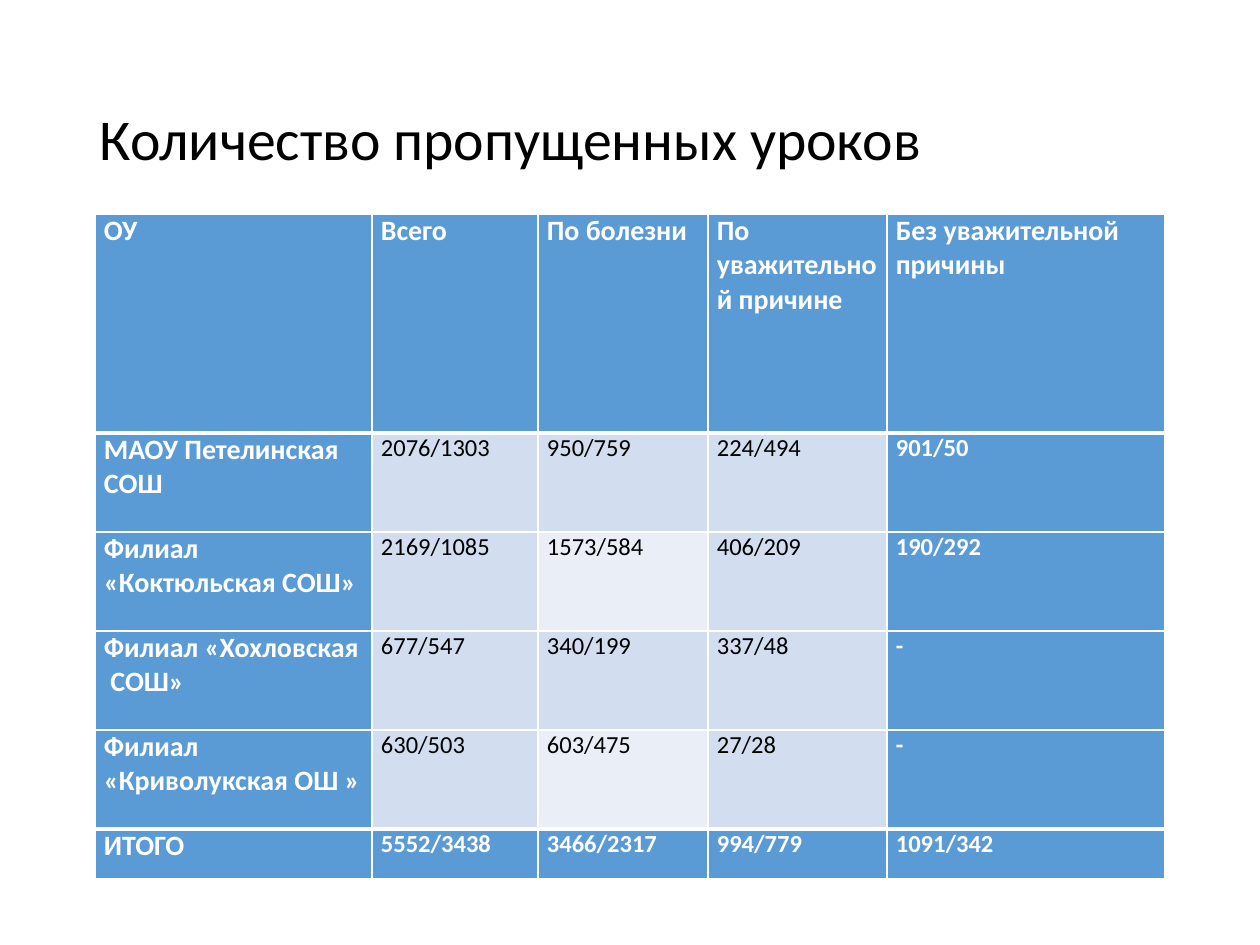
"""Builds a slide with a table of missed lessons by school."""
from dataclasses import dataclass

from lxml import etree
from pptx import Presentation
from pptx.dml.color import RGBColor
from pptx.enum import text
from pptx.oxml.ns import qn
from pptx.util import Emu, Pt

SCALE = 914400 / 126
FONT = "Calibri"
WHITE, BLACK = "FFFFFF", "000000"
BLUE, BAND, PALE = "5B9BD5", "D2DEEF", "EAEFF7"
COLS = [277, 166, 170, 179, 278]
HEIGHTS = [219, 99, 99, 99, 99, 50]


@dataclass
class Row:
    school: str
    values: list[str]


ROWS = [
    Row("ОУ", ["Всего", "По болезни", "По уважительной причине", "Без уважительной причины"]),
    Row("МАОУ Петелинская СОШ", ["2076/1303", "950/759", "224/494", "901/50"]),
    Row("Филиал «Коктюльская СОШ»", ["2169/1085", "1573/584", "406/209", "190/292"]),
    Row("Филиал «Хохловская  СОШ»", ["677/547", "340/199", "337/48", "-"]),
    Row("Филиал «Криволукская ОШ »", ["630/503", "603/475", "27/28", "-"]),
    Row("ИТОГО", ["5552/3438", "3466/2317", "994/779", "1091/342"]),
]


def px(n: int) -> Emu:
    return Emu(round(n * SCALE))


def rgb(value: str) -> RGBColor:
    return RGBColor.from_string(value)


def write(tf, words: str, *, size: int, color: str = BLACK, bold: bool = False,
          spacing: float = 1.0) -> None:
    p = tf.paragraphs[0]
    p.alignment = text.PP_ALIGN.LEFT
    p.line_spacing = spacing
    r = p.add_run()
    r.text = words
    r.font.name, r.font.size, r.font.bold = FONT, Pt(size), bold
    r.font.color.rgb = rgb(color)


def set_borders(cell, widths: dict[str, int]) -> None:
    tc_pr = cell._tc.get_or_add_tcPr()
    for i, (side, width) in enumerate(widths.items()):
        ln = etree.Element(qn(f"a:ln{side}"), w=str(Pt(width)))
        fill = etree.SubElement(ln, qn("a:solidFill"))
        etree.SubElement(fill, qn("a:srgbClr"), val=WHITE)
        tc_pr.insert(i, ln)


def fill_cell(cell, words: str, row: int, col: int) -> None:
    last = len(ROWS) - 1
    strong = row in (0, last) or col in (0, len(COLS) - 1)
    pale = col == 2 and row % 2 == 0
    cell.margin_left = cell.margin_right = px(9)
    cell.margin_top = cell.margin_bottom = 0
    cell.vertical_anchor = text.MSO_ANCHOR.TOP
    cell.fill.solid()
    cell.fill.fore_color.rgb = rgb(BLUE if strong else PALE if pale else BAND)
    write(cell.text_frame, words, size=16 if row == 0 or col == 0 else 14,
          color=WHITE if strong else BLACK, bold=strong)
    set_borders(cell, {"L": 1, "R": 1, "T": 3 if row in (1, last) else 1,
                       "B": 3 if row in (0, last - 1) else 1})


def add_table(s) -> None:
    frame = s.shapes.add_table(len(ROWS), len(COLS), px(95), px(214),
                               px(sum(COLS)), px(sum(HEIGHTS)))
    table = frame.table
    table.horz_banding = False
    for column, width in zip(table.columns, COLS):
        column.width = px(width)
    for i, (row, height) in enumerate(zip(ROWS, HEIGHTS)):
        table.rows[i].height = px(height)
        for j, words in enumerate([row.school, *row.values]):
            fill_cell(table.cell(i, j), words, i, j)


def main() -> None:
    prs = Presentation()
    prs.slide_width, prs.slide_height = px(1260), px(945)
    s = prs.slides.add_slide(prs.slide_layouts[5])
    title = s.shapes.title
    title.left, title.top, title.width, title.height = px(87), px(50), px(1086), px(183)
    tf = title.text_frame
    tf.word_wrap = True
    tf.vertical_anchor = text.MSO_ANCHOR.MIDDLE
    write(tf, "Количество пропущенных уроков", size=33, spacing=0.9)
    add_table(s)
    prs.save("out.pptx")


if __name__ == "__main__":
    main()
